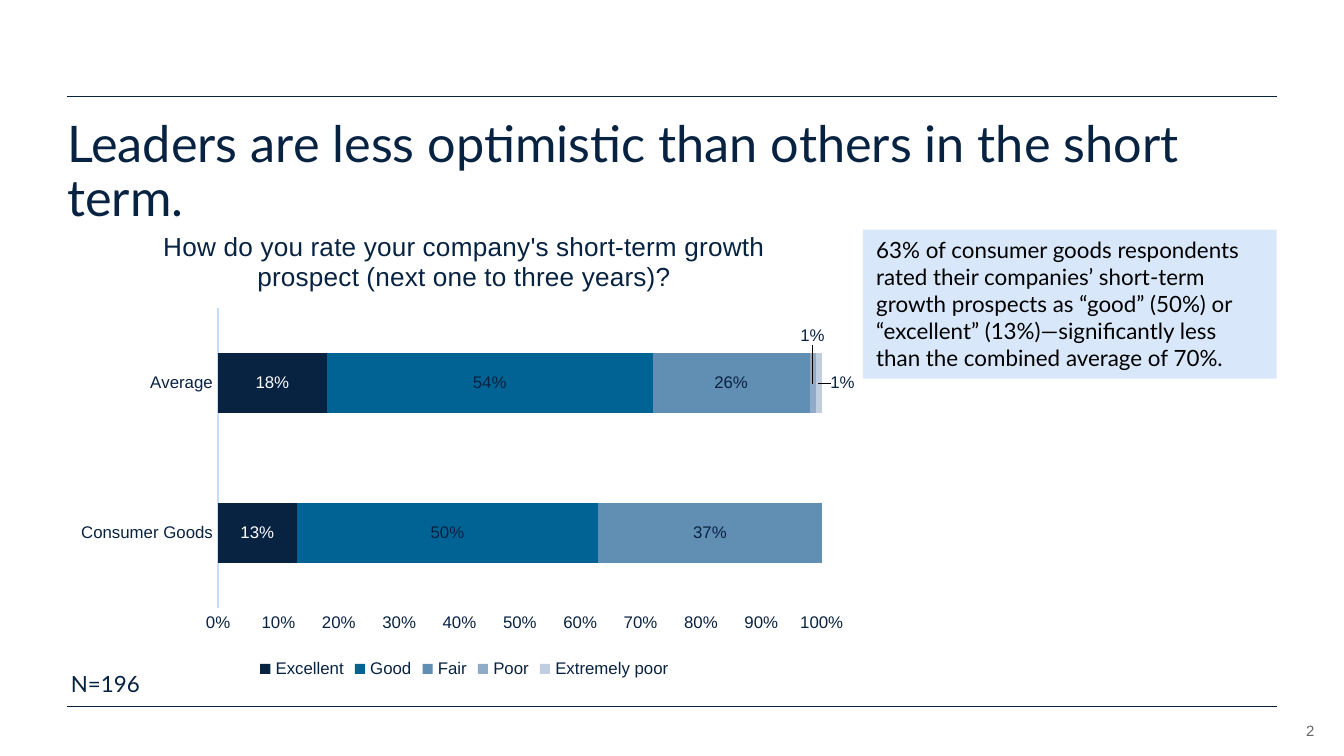
"""Build a slide comparing short-term growth ratings in a stacked bar chart."""
from lxml.etree import SubElement
from pptx import Presentation
from pptx.chart.data import CategoryChartData
from pptx.dml.color import RGBColor
from pptx.enum.chart import XL_CHART_TYPE as ChartType
from pptx.enum.chart import XL_LABEL_POSITION as LabelPosition
from pptx.enum.chart import XL_LEGEND_POSITION as LegendPosition
from pptx.enum.chart import XL_TICK_MARK as TickMark
from pptx.enum.shapes import MSO_CONNECTOR as Connector
from pptx.enum.text import MSO_ANCHOR as Anchor
from pptx.enum.text import PP_ALIGN as Align
from pptx.oxml import parse_xml
from pptx.oxml.ns import qn
from pptx.util import Cm, Pt

NAVY = RGBColor(0x08, 0x22, 0x41)
TEAL = RGBColor(0x00, 0x63, 0x93)
STEEL = RGBColor(0x61, 0x8E, 0xB3)
MIST = RGBColor(0x8F, 0xAB, 0xC8)
HAZE = RGBColor(0xC1, 0xCE, 0xDF)
PALE = RGBColor(0xD8, 0xE8, 0xFA)
AXIS_BLUE = RGBColor(0xC5, 0xDC, 0xF8)
GREY = RGBColor(0x66, 0x66, 0x66)
BLACK = RGBColor(0, 0, 0)
WHITE = RGBColor(0xFF, 0xFF, 0xFF)

TITLE = "Leaders are less optimistic than others in the short term."
FINDING = (
    "63% of consumer goods respondents rated their companies’ short-term growth "
    "prospects as “good” (50%) or “excellent” (13%)—significantly less than the "
    "combined average of 70%."
)
SAMPLE = "N=196"
PAGE = "2"
QUESTION = "How do you rate your company's short-term growth prospect (next one to three years)?"
CATEGORIES = ["Consumer Goods", "Average"]
AVERAGE = CATEGORIES.index("Average")
RATINGS = [
    ("Excellent", [0.13, 0.18], NAVY, WHITE, None),
    ("Good", [0.5, 0.54], TEAL, NAVY, None),
    ("Fair", [0.37, 0.26], STEEL, NAVY, None),
    ("Poor", [None, 0.01], MIST, NAVY, (0, -0.1)),
    ("Extremely poor", [None, 0.01], HAZE, NAVY, (0.03, 0)),
]
PERCENT = "0%"
LEFT, RIGHT = 1.27, 24.13
RULES = [1.83, 13.36]
PLOT_AREA = {"x": 0.19, "y": 0.21, "w": 0.76, "h": 0.63}


def set_font(font, size, color, name="Arial"):
    font.size = Pt(size)
    font.name = name
    font.bold = False
    font.color.rgb = color


def add_text(slide, text, box, size=12, color=NAVY, name="Lato", fill=None,
             inset=None, align=Align.LEFT, anchor=Anchor.TOP, spacing=None):
    shape = slide.shapes.add_textbox(*map(Cm, box))
    if fill is not None:
        shape.fill.solid()
        shape.fill.fore_color.rgb = fill
    frame = shape.text_frame
    frame.word_wrap = True
    frame.vertical_anchor = anchor
    if inset is not None:
        frame.margin_left = frame.margin_right = Cm(inset)
        frame.margin_top = frame.margin_bottom = Cm(inset)
    paragraph = frame.paragraphs[0]
    paragraph.alignment = align
    paragraph.line_spacing = spacing
    run = paragraph.add_run()
    run.text = text
    set_font(run.font, size, color, name)


def add_rule(slide, top):
    rule = slide.shapes.add_connector(Connector.STRAIGHT, Cm(LEFT), Cm(top), Cm(RIGHT), Cm(top))
    rule.line.color.rgb = NAVY
    rule.line.width = Pt(0.5)
    SubElement(rule._element.spPr, qn("a:effectLst"))


def make_layout(values, inner=False):
    namespace = "http://schemas.openxmlformats.org/drawingml/2006/chart"
    layout = parse_xml(f'<c:layout xmlns:c="{namespace}"><c:manualLayout/></c:layout>')
    settings = {"layoutTarget": "inner", "xMode": "edge", "yMode": "edge"} if inner else {}
    for tag, value in (settings | values).items():
        SubElement(layout[0], qn(f"c:{tag}")).set("val", str(value))
    return layout


def format_label(label, color):
    set_font(label.font, 9, color)
    label.position = LabelPosition.CENTER


def move_label(point, color, offset):
    format_label(point.data_label, color)
    label = point.data_label._dLbl
    label.insert(1, make_layout(dict(zip("xy", offset))))
    number_format = SubElement(label, qn("c:numFmt"))
    number_format.set("formatCode", PERCENT)
    number_format.set("sourceLinked", "0")
    label.insert(2, number_format)


def format_axes(chart):
    for axis in (chart.category_axis, chart.value_axis):
        axis.major_tick_mark = axis.minor_tick_mark = TickMark.NONE
        axis.has_major_gridlines = False
        set_font(axis.tick_labels.font, 9, NAVY)
    chart.category_axis.format.line.color.rgb = AXIS_BLUE
    chart.category_axis.format.line.width = Pt(0.75)
    chart.value_axis.format.line.fill.background()
    chart.value_axis.minimum_scale = 0
    chart.value_axis.maximum_scale = 1
    chart.value_axis.major_unit = 0.1
    chart.value_axis.tick_labels.number_format = PERCENT
    chart.value_axis.tick_labels.number_format_is_linked = False


def add_ratings_chart(slide, box):
    data = CategoryChartData(number_format=PERCENT)
    data.categories = CATEGORIES
    for name, values, *_ in RATINGS:
        data.add_series(name, values)
    chart = slide.shapes.add_chart(ChartType.BAR_STACKED_100, *map(Cm, box), data).chart
    set_font(chart.font, 10, NAVY)

    chart.has_title = True
    run = chart.chart_title.text_frame.paragraphs[0].add_run()
    run.text = QUESTION
    set_font(run.font, 14, NAVY)
    chart.chart_title.include_in_layout = False

    chart.has_legend = True
    chart.legend.position = LegendPosition.BOTTOM
    chart.legend.include_in_layout = False
    set_font(chart.legend.font, 9, NAVY)
    format_axes(chart)

    plot = chart.plots[0]
    plot.gap_width = 150
    plot.overlap = 100
    plot.vary_by_categories = False
    for series, (_, _, color, label_color, offset) in zip(plot.series, RATINGS):
        series.format.fill.solid()
        series.format.fill.fore_color.rgb = color
        labels = series.data_labels
        labels.show_value = True
        labels.number_format = PERCENT
        labels.number_format_is_linked = False
        format_label(labels, label_color)
        if offset:
            move_label(series.points[AVERAGE], label_color, offset)

    plot_area = chart._chartSpace.chart.plotArea
    for layout in plot_area.findall(qn("c:layout")):
        plot_area.remove(layout)
    plot_area.insert(0, make_layout(PLOT_AREA, inner=True))


def main():
    presentation = Presentation()
    presentation.slide_width = Cm(25.4)
    presentation.slide_height = Cm(14.29)
    slide = presentation.slides.add_slide(presentation.slide_layouts[6])
    for top in RULES:
        add_rule(slide, top)
    add_text(slide, PAGE, (23.65, 13.51, 1.19, 0.46), size=8, color=GREY, name="Arial",
             inset=0, align=Align.RIGHT, anchor=Anchor.BOTTOM)
    add_text(slide, TITLE, (LEFT, 2.24, RIGHT - LEFT, 1.4), size=27, inset=0, spacing=0.9)
    add_text(slide, FINDING, (16.31, 4.34, 7.82, 2.82), color=BLACK, fill=PALE)
    add_text(slide, SAMPLE, (1.09, 12.55, 3.25, 0.76))
    add_ratings_chart(slide, (LEFT, 3.94, 15.01, 8.99))
    presentation.save("out.pptx")


if __name__ == "__main__":
    main()
